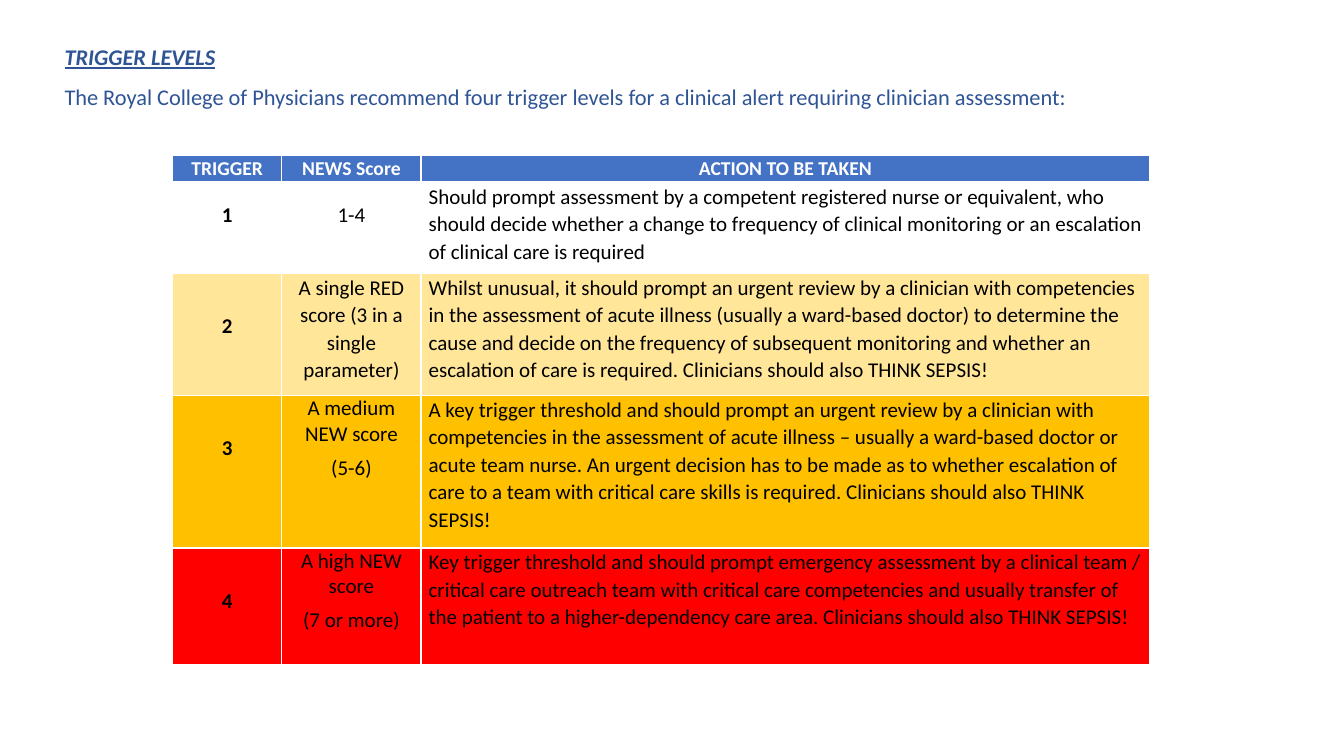
from lxml import etree
from pptx import Presentation
from pptx.dml.color import RGBColor
from pptx.enum.text import MSO_AUTO_SIZE, PP_ALIGN
from pptx.oxml.ns import qn
from pptx.util import Pt

CENTER, LEFT = PP_ALIGN.CENTER, PP_ALIGN.LEFT
FIT = MSO_AUTO_SIZE.SHAPE_TO_FIT_TEXT
FONT = "Calibri"
BLUE, WHITE, BLACK = "2F5496", "FFFFFF", "000000"
HEAD_FILL = "4472C4"
WIDTHS = [78, 99.5, 520.5]
HEIGHTS = [19.5, 65, 87, 109, 83.5]
HEADS = ["TRIGGER", "NEWS Score", "ACTION TO BE TAKEN"]

# fill, space above trigger, space above score, score line spacing, score, action
LEVELS = [
    (WHITE, 13.2, 13.2, 1.07, ["1-4"],
     "Should prompt assessment by a competent registered nurse or equivalent, "
     "who should decide whether a change to frequency of clinical monitoring "
     "or an escalation of clinical care is required"),
    ("FFE699", 27.5, 0, 1.07, ["A single RED score (3 in a single parameter)"],
     "Whilst unusual, it should prompt an urgent review by a clinician with "
     "competencies in the assessment of acute illness (usually a ward-based "
     "doctor) to determine the cause and decide on the frequency of subsequent "
     "monitoring and whether an escalation of care is required. Clinicians "
     "should also THINK SEPSIS!"),
    ("FFC000", 27.5, 0, 1, ["A medium NEW score", "(5-6)"],
     "A key trigger threshold and should prompt an urgent review by a "
     "clinician with competencies in the assessment of acute illness – usually "
     "a ward-based doctor or acute team nurse. An urgent decision has to be "
     "made as to whether escalation of care to a team with critical care "
     "skills is required. Clinicians should also THINK SEPSIS!"),
    ("FF0000", 27.5, 0, 1, ["A high NEW score", "(7 or more)"],
     "Key trigger threshold and should prompt emergency assessment by a "
     "clinical team / critical care outreach team with critical care "
     "competencies and usually transfer of the patient to a higher-dependency "
     "care area. Clinicians should also THINK SEPSIS!"),
]


def color(text):
    return RGBColor.from_string(text)


def write(frame, lines, size, ink, bold=False, align=LEFT, space=1.07, after=8):
    for i, line in enumerate(lines):
        para = frame.paragraphs[0] if i == 0 else frame.add_paragraph()
        para.text = line
        para.alignment = align
        para.line_spacing = space
        para.space_before = Pt(0)
        para.space_after = Pt(after)
        font = para.font
        font.name, font.size, font.bold = FONT, Pt(size), bold
        font.color.rgb = color(ink)


def border(cell, base):
    """Draw white lines around a cell, the bottom one as wide as base."""
    props = cell._tc.get_or_add_tcPr()
    for i, (side, width) in enumerate(zip("LRTB", (1, 1, 1, base))):
        line = etree.Element(qn("a:ln" + side), w=str(Pt(width)))
        fill = etree.SubElement(line, qn("a:solidFill"))
        etree.SubElement(fill, qn("a:srgbClr"), val=WHITE)
        props.insert(i, line)


def style(cell, fill, top=0, base=1):
    cell.margin_left = cell.margin_right = Pt(5.4)
    cell.margin_top, cell.margin_bottom = Pt(top), Pt(0)
    cell.fill.solid()
    cell.fill.fore_color.rgb = color(fill)
    border(cell, base)


def add_intro(slide, left, top, width, height):
    box = slide.shapes.add_textbox(Pt(left), Pt(top), Pt(width), Pt(height))
    frame = box.text_frame
    frame.word_wrap = True
    frame.auto_size = FIT
    write(frame, [
        "TRIGGER LEVELS",
        "The Royal College of Physicians recommend four trigger levels for a "
        "clinical alert requiring clinician assessment:"], 16, BLUE)
    font = frame.paragraphs[0].font
    font.bold = font.italic = font.underline = True


def add_levels(slide, left, top):
    shape = slide.shapes.add_table(
        len(HEIGHTS), len(WIDTHS), Pt(left), Pt(top),
        Pt(sum(WIDTHS)), Pt(sum(HEIGHTS)))
    table = shape.table
    table.horz_banding = False
    for col, width in zip(table.columns, WIDTHS):
        col.width = Pt(width)
    for row, height in zip(table.rows, HEIGHTS):
        row.height = Pt(height)

    for i, head in enumerate(HEADS):
        cell = table.cell(0, i)
        style(cell, HEAD_FILL, base=3)
        write(cell.text_frame, [head], 14, WHITE, True, CENTER, after=6)

    for n, (fill, drop, gap, space, score, action) in enumerate(LEVELS, 1):
        trigger, mark, deed = (table.cell(n, i) for i in range(3))
        for cell, above in ((trigger, drop), (mark, gap), (deed, 0)):
            style(cell, fill, above)
        write(trigger.text_frame, [str(n)], 15, BLACK, True, CENTER)
        write(mark.text_frame, score, 15, BLACK, False, CENTER, space, 6)
        write(deed.text_frame, [action], 15, BLACK)


def main():
    deck = Presentation()
    deck.slide_width, deck.slide_height = Pt(960), Pt(540)
    slide = deck.slides.add_slide(deck.slide_layouts[6])
    add_intro(slide, 39, 26, 865.5, 56)
    add_levels(slide, 123.3, 111)
    deck.save("out.pptx")


if __name__ == "__main__":
    main()
